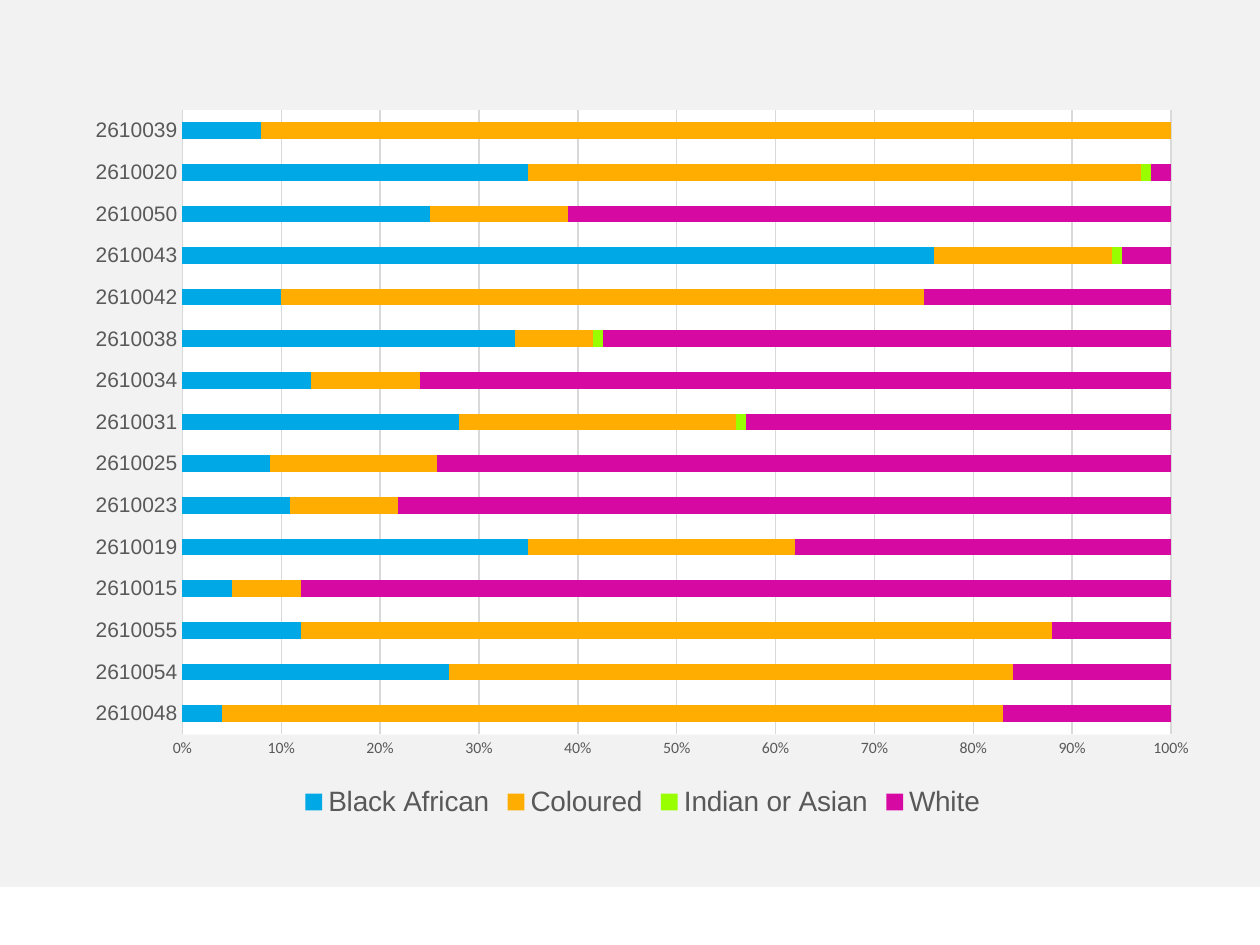
from typing import NamedTuple

from lxml import etree
from pptx import Presentation
from pptx.chart.data import CategoryChartData
from pptx.dml.color import RGBColor
from pptx.enum import chart as ch, shapes
from pptx.oxml import parse_xml
from pptx.oxml.ns import nsdecls, qn
from pptx.util import Inches, Pt

HUES = {
    "panel": "F2F2F2", "plot": "FFFFFF", "text": "595959", "grid": "D9D9D9",
    "blue": "00A8E6", "amber": "FFAD01", "lime": "99FE00", "pink": "D609A2",
}


class Group(NamedTuple):
    name: str
    hue: str
    shares: list[int]


AREAS = [
    "2610048", "2610054", "2610055", "2610015", "2610019",
    "2610023", "2610025", "2610031", "2610034", "2610038",
    "2610042", "2610043", "2610050", "2610020", "2610039",
]
GROUPS = [
    Group("Black African", "blue",
          [4, 27, 12, 5, 35, 11, 9, 28, 13, 34, 10, 76, 25, 35, 8]),
    Group("Coloured", "amber",
          [79, 57, 76, 7, 27, 11, 17, 28, 11, 8, 65, 18, 14, 62, 92]),
    Group("Indian or Asian", "lime",
          [0, 0, 0, 0, 0, 0, 0, 1, 0, 1, 0, 1, 0, 1, 0]),
    Group("White", "pink",
          [17, 16, 12, 88, 38, 79, 75, 43, 76, 58, 25, 5, 61, 2, 0]),
]


def rgb(hue: str) -> RGBColor:
    return RGBColor.from_string(HUES[hue])


def paint(fill, hue: str) -> None:
    fill.solid()
    fill.fore_color.rgb = rgb(hue)


def style(font, face: str, size: int) -> None:
    font.name, font.size = face, Pt(size)
    font.color.rgb = rgb("text")


def rule(line) -> None:
    line.color.rgb = rgb("grid")
    line.width = Pt(0.75)


def set_plot(chart, **frame: float) -> None:
    """Fix the inner plot frame, in fractions of the chart, and fill it."""
    area = chart.plots[0]._element.getparent()
    for old in area.findall(qn("c:layout")):
        area.remove(old)
    layout = parse_xml(f"<c:layout {nsdecls('c')}><c:manualLayout/></c:layout>")
    parts = {"layoutTarget": "inner", "xMode": "edge", "yMode": "edge", **frame}
    for tag, value in parts.items():
        etree.SubElement(layout[0], qn(f"c:{tag}")).set("val", str(value))
    area.insert(0, layout)
    area.append(parse_xml(
        f"<c:spPr {nsdecls('c', 'a')}><a:solidFill>"
        f"<a:srgbClr val=\"{HUES['plot']}\"/></a:solidFill></c:spPr>"))


def add_panel(slide) -> None:
    panel = slide.shapes.add_shape(
        shapes.MSO_SHAPE.RECTANGLE, 0, 0, Inches(10), Inches(7.04))
    panel.shadow.inherit = False
    paint(panel.fill, "panel")
    panel.line.fill.background()


def add_bars(slide) -> None:
    data = CategoryChartData(number_format="0")
    data.categories = AREAS
    for group in GROUPS:
        data.add_series(group.name, group.shares)
    chart = slide.shapes.add_chart(
        ch.XL_CHART_TYPE.BAR_STACKED_100, Inches(0.58), Inches(0.75),
        Inches(9.04), Inches(5.78), data).chart
    chart.has_title = False
    style(chart.font, "Calibri", 10)
    set_plot(chart, x=0.096, y=0.021, w=0.868, h=0.858)

    plot = chart.plots[0]
    plot.gap_width, plot.overlap = 150, 100
    plot.vary_by_categories = False
    for series, group in zip(plot.series, GROUPS):
        paint(series.format.fill, group.hue)
        series.invert_if_negative = False

    cats, vals = chart.category_axis, chart.value_axis
    for axis, face, size in ((cats, "Arial", 12), (vals, "Calibri", 9)):
        axis.major_tick_mark = axis.minor_tick_mark = ch.XL_TICK_MARK.NONE
        style(axis.tick_labels.font, face, size)
    rule(cats.format.line)
    vals.format.line.fill.background()
    vals.has_major_gridlines = True
    rule(vals.major_gridlines.format.line)
    vals.minimum_scale, vals.maximum_scale, vals.major_unit = 0, 1, 0.1
    vals.tick_labels.number_format = "0%"
    vals.tick_labels.number_format_is_linked = False

    chart.has_legend = True
    chart.legend.position = ch.XL_LEGEND_POSITION.BOTTOM
    chart.legend.include_in_layout = False
    style(chart.legend.font, "Arial", 16)


def main() -> None:
    deck = Presentation()
    deck.slide_width, deck.slide_height = Inches(10), Inches(7.5)
    slide = deck.slides.add_slide(deck.slide_layouts[6])
    add_panel(slide)
    add_bars(slide)
    deck.save("out.pptx")


if __name__ == "__main__":
    main()
